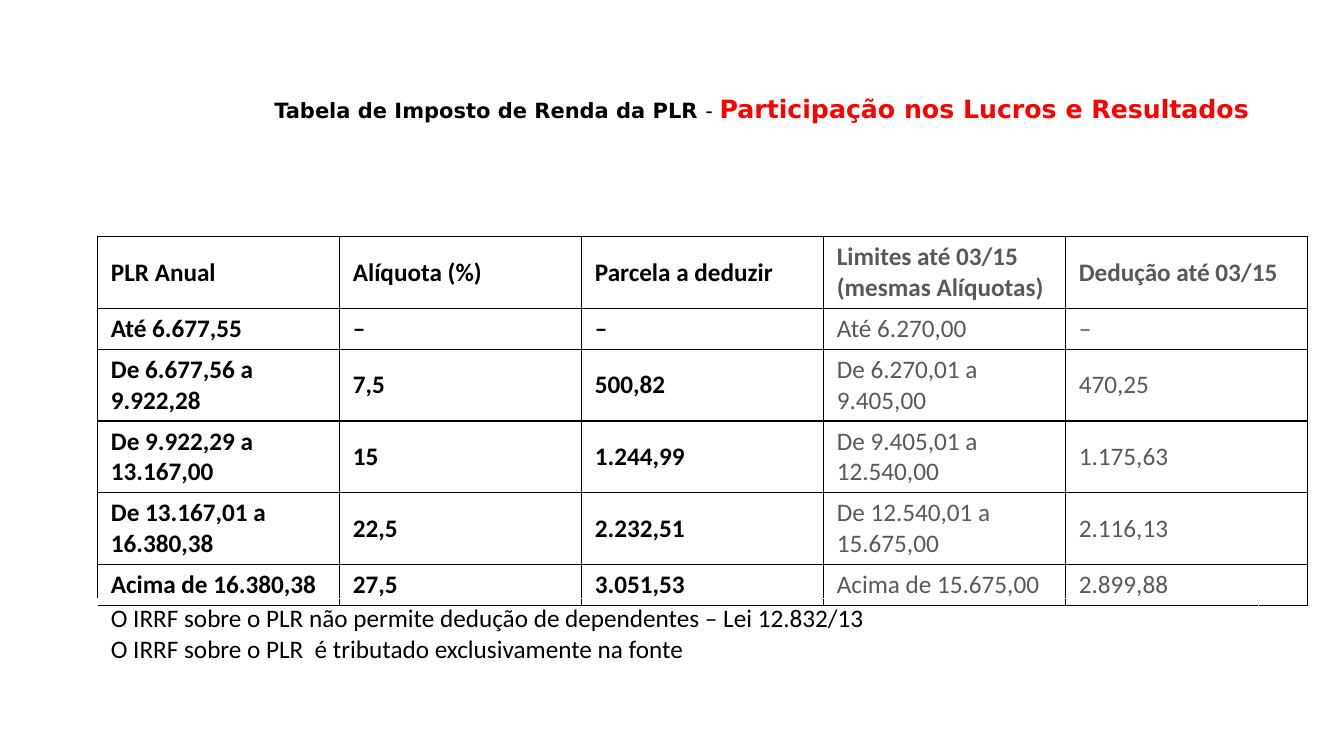
from lxml.etree import SubElement
from pptx import Presentation
from pptx.dml.color import RGBColor
from pptx.enum.text import MSO_ANCHOR, PP_ALIGN
from pptx.oxml.ns import qn
from pptx.util import Inches, Pt

COLORS = {"black": "000000", "gray": "595959", "red": "FF0000"}

TITLE = [
    ("Tabela de Imposto de Renda da PLR ", {"size": 15, "bold": True}),
    ("- ", {"size": 15}),
    ("Participação nos Lucros e Resultados", {"size": 18, "bold": True, "color": "red"}),
]
TAX_ROWS = [
    ("PLR Anual", "Alíquota (%)", "Parcela a deduzir",
     "Limites até 03/15 (mesmas Alíquotas)", "Dedução até 03/15"),
    ("Até 6.677,55", "–", "–", "Até 6.270,00", "–"),
    ("De 6.677,56 a 9.922,28", "7,5", "500,82", "De 6.270,01 a 9.405,00", "470,25"),
    ("De 9.922,29 a 13.167,00", "15", "1.244,99", "De 9.405,01 a 12.540,00", "1.175,63"),
    ("De 13.167,01 a 16.380,38", "22,5", "2.232,51", "De 12.540,01 a 15.675,00", "2.116,13"),
    ("Acima de 16.380,38", "27,5", "3.051,53", "Acima de 15.675,00", "2.899,88"),
]
NOTES = [
    "O IRRF sobre o PLR não permite dedução de dependentes – Lei 12.832/13",
    "O IRRF sobre o PLR  é tributado exclusivamente na fonte",
]
CURRENT_COLUMNS = 3
ONE_LINE, TWO_LINES = 0.4, 0.71
ROW_HEIGHTS = [TWO_LINES, ONE_LINE, TWO_LINES, TWO_LINES, TWO_LINES, ONE_LINE]
TABLE_LEFT = 0.97


def add_text(paragraph, text, size=18, font="Calibri", color="black", bold=False):
    run = paragraph.add_run()
    run.text = text
    run.font.size = Pt(size)
    run.font.name = font
    run.font.bold = bold
    run.font.color.rgb = RGBColor.from_string(COLORS[color])


def add_plain_table(slide, top, column_widths, row_heights):
    """Add a table without banding, fills or header style."""
    frame = slide.shapes.add_table(
        len(row_heights), len(column_widths), Inches(TABLE_LEFT), Inches(top),
        Inches(sum(column_widths)), Inches(sum(row_heights)))
    table = frame.table
    table.first_row = table.horz_banding = False
    for column, width in zip(table.columns, column_widths):
        column.width = Inches(width)
    for row, height in zip(table.rows, row_heights):
        row.height = Inches(height)
    for cell in table.iter_cells():
        cell.margin_left = cell.margin_right = Inches(0.13)
        cell.margin_top = cell.margin_bottom = Inches(0.05)
        cell.vertical_anchor = MSO_ANCHOR.MIDDLE
    return table


def add_borders(cell):
    properties = cell._tc.get_or_add_tcPr()
    for side in ("lnL", "lnR", "lnT", "lnB"):
        line = SubElement(properties, qn(f"a:{side}"), w=str(Pt(1)))
        fill = SubElement(line, qn("a:solidFill"))
        SubElement(fill, qn("a:srgbClr"), val=COLORS["black"])


def add_title(slide):
    title = slide.shapes.title
    title.left, title.top = Inches(2.62), Inches(0.88)
    title.width, title.height = Inches(10.35), Inches(0.4)
    title.text_frame.word_wrap = True
    title.text_frame.vertical_anchor = MSO_ANCHOR.MIDDLE
    paragraph = title.text_frame.paragraphs[0]
    paragraph.alignment = PP_ALIGN.LEFT
    for text, style in TITLE:
        add_text(paragraph, text, font="DejaVu Sans", **style)


def add_tax_table(slide):
    table = add_plain_table(slide, 2.35, [2.4] * len(TAX_ROWS[0]), ROW_HEIGHTS)
    for row_index, values in enumerate(TAX_ROWS):
        for column_index, value in enumerate(values):
            cell = table.cell(row_index, column_index)
            current = column_index < CURRENT_COLUMNS
            add_text(cell.text_frame.paragraphs[0], value,
                     color="black" if current else "gray",
                     bold=current or row_index == 0)
            add_borders(cell)
            cell.fill.background()


def add_notes_table(slide):
    cell = add_plain_table(slide, 5.94, [11.51], [0.7]).cell(0, 0)
    cell.fill.background()
    frame = cell.text_frame
    for index, note in enumerate(NOTES):
        paragraph = frame.add_paragraph() if index else frame.paragraphs[0]
        add_text(paragraph, note)


def main():
    presentation = Presentation()
    presentation.slide_width, presentation.slide_height = Inches(13.33), Inches(7.5)
    slide = presentation.slides.add_slide(presentation.slide_layouts[5])
    add_title(slide)
    add_tax_table(slide)
    add_notes_table(slide)
    presentation.save("out.pptx")


if __name__ == "__main__":
    main()
